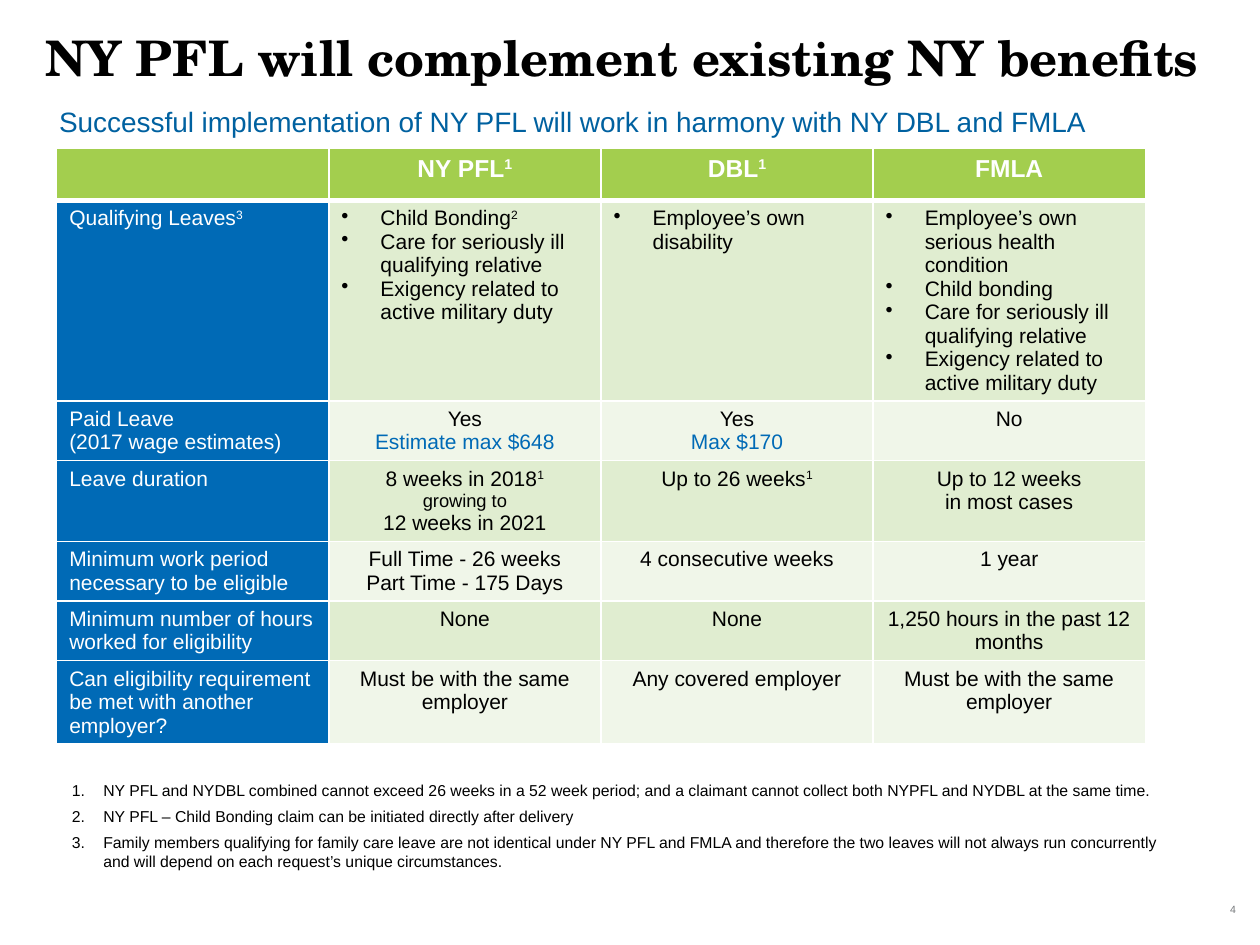
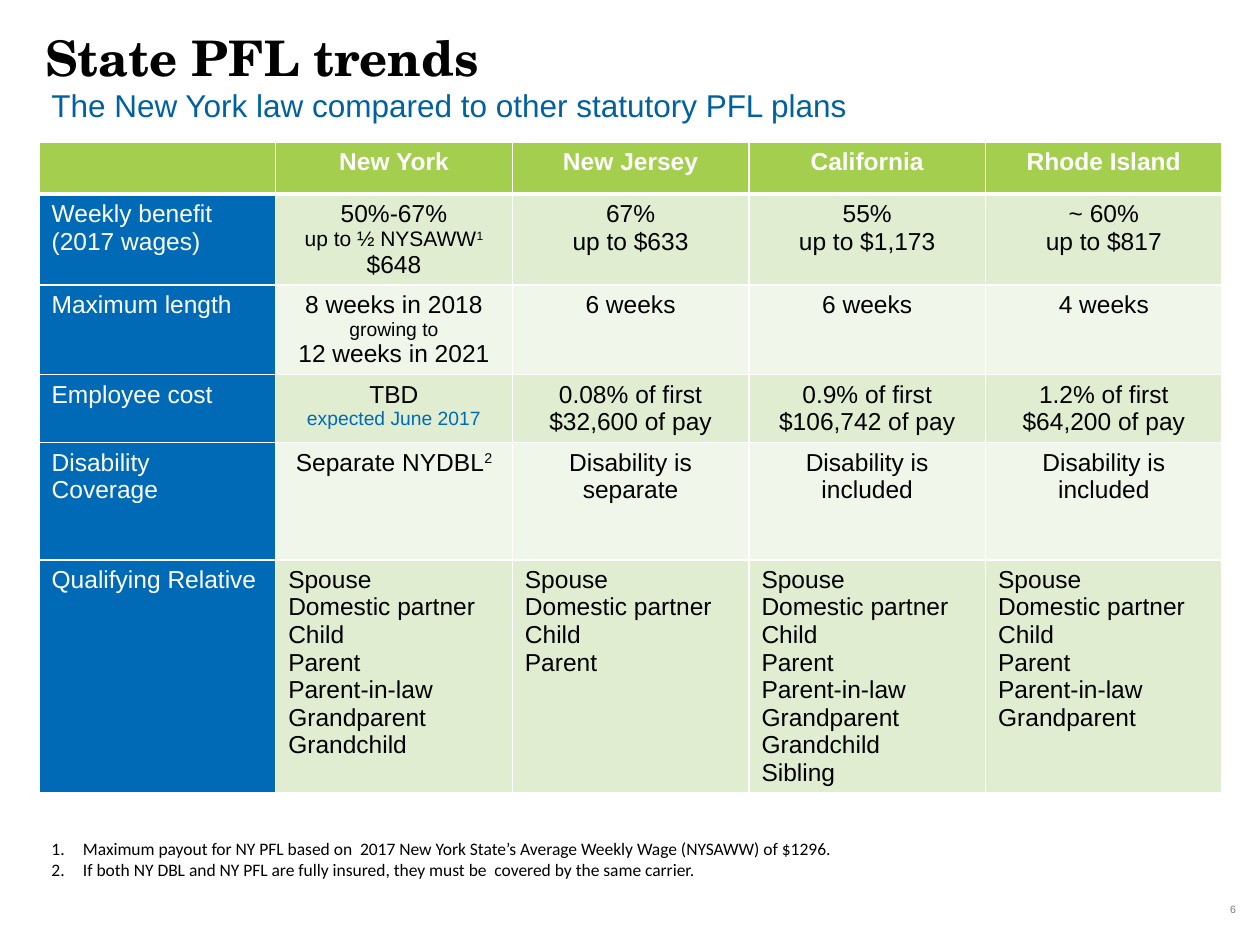
from lxml import etree
from pptx import Presentation
from pptx.dml.color import RGBColor
from pptx.enum.text import MSO_ANCHOR, MSO_AUTO_SIZE, PP_ALIGN
from pptx.oxml.ns import qn
from pptx.util import Inches, Pt

LEFT, CENTER, RIGHT = PP_ALIGN.LEFT, PP_ALIGN.CENTER, PP_ALIGN.RIGHT
TOP, MIDDLE, BOTTOM = MSO_ANCHOR.TOP, MSO_ANCHOR.MIDDLE, MSO_ANCHOR.BOTTOM

BLACK = RGBColor(0x00, 0x00, 0x00)
WHITE = RGBColor(0xFF, 0xFF, 0xFF)
GRAY = RGBColor(0x75, 0x78, 0x7B)
NAVY = RGBColor(0x00, 0x61, 0xA0)
BLUE = RGBColor(0x00, 0x6A, 0xB6)
GREEN = RGBColor(0xA3, 0xCE, 0x4E)
BANDS = RGBColor(0xE0, 0xED, 0xD0), RGBColor(0xF0, 0xF6, 0xE9)

TITLE_FONT, BODY_FONT, NOTE_FONT = "TeX Gyre Schola", "Arial", "Calibri"
COLUMNS, ROWS = 100, 75


def add_list_mark(p, tag, indent, **attributes):
    pPr = p._p.get_or_add_pPr()
    pPr.set("marL", str(Inches(indent)))
    pPr.set("indent", str(-Inches(indent)))
    etree.SubElement(pPr, qn(tag), attributes)


def add_borders(cell, top, bottom):
    """Draw white borders, 1 pt at the sides and the given points above and below."""
    tcPr = cell._tc.get_or_add_tcPr()
    widths = {"a:lnL": 1, "a:lnR": 1, "a:lnT": top, "a:lnB": bottom}
    for place, (tag, width) in enumerate(widths.items()):
        line = etree.Element(qn(tag), w=str(Pt(width)))
        fill = etree.SubElement(line, qn("a:solidFill"))
        etree.SubElement(fill, qn("a:srgbClr"), val=str(WHITE))
        tcPr.insert(place, line)


def write(p, text, size, color, font=BODY_FONT, bold=False):
    """Fill a paragraph; a caret raises the character that follows it."""
    plain, *raised = text.split("^")
    p.text = plain
    for mark in raised:
        p.add_run().text = mark
    for i, r in enumerate(p.runs):
        r.font.size, r.font.name, r.font.bold = Pt(size), font, bold
        r.font.color.rgb = color
        if i:
            r._r.get_or_add_rPr().set("baseline", "30000")


class Deck:
    def __init__(self):
        self.prs = Presentation()
        self.prs.slide_width, self.prs.slide_height = Inches(10), Inches(7.5)
        self.dx = self.prs.slide_width / COLUMNS
        self.dy = self.prs.slide_height / ROWS
        self.slide = None

    def box(self, x, y, w, h):
        """Turn grid columns and rows into lengths."""
        return [round(n) for n in (x * self.dx, y * self.dy, w * self.dx, h * self.dy)]

    def frame(self, sp, anchor, side, edge):
        tf = sp.text_frame
        tf.word_wrap, tf.auto_size = True, MSO_AUTO_SIZE.NONE
        tf.vertical_anchor = anchor
        tf.margin_left = tf.margin_right = Inches(side)
        tf.margin_top = tf.margin_bottom = Inches(edge)
        return tf

    def text_box(self, area, anchor, side, edge):
        sp = self.slide.shapes.add_textbox(*self.box(*area))
        return self.frame(sp, anchor, side, edge)

    def new_slide(self, title, area, number):
        self.slide = self.prs.slides.add_slide(self.prs.slide_layouts[5])
        sp = self.slide.shapes.title
        sp.left, sp.top, sp.width, sp.height = self.box(*area)
        p = self.frame(sp, TOP, 0.07, 0.04).paragraphs[0]
        write(p, title, 28, BLACK, TITLE_FONT, True)
        p.alignment, p.line_spacing = LEFT, 0.9
        p = self.text_box((91.4, 70.2, 7.4, 4), MIDDLE, 0.07, 0.04).paragraphs[0]
        write(p, number, 6, GRAY)
        p.alignment = RIGHT

    def subtitle(self, text, area, size):
        p = self.text_box(area, BOTTOM, 0.1, 0).paragraphs[0]
        write(p, text, size, NAVY)
        p.line_spacing = 1.4

    def footnotes(self, notes, area, size, font, anchor, side, edge, gap):
        tf = self.text_box(area, anchor, side, edge)
        for i, note in enumerate(notes):
            p = tf.paragraphs[0] if i == 0 else tf.add_paragraph()
            add_list_mark(p, "a:buAutoNum", 0.25, type="arabicPeriod")
            write(p, note, size, BLACK, font)
            p.space_before, p.space_after = Pt(gap if i else 0), Pt(gap)

    def table(self, rows, area, heights, size, accents, list_row, bulleted):
        """Draw rows of text; accents maps a line to its own size and colour."""
        x, y, w = area
        shape = self.slide.shapes.add_table(
            len(rows), len(rows[0]), *self.box(x, y, w, sum(heights)))
        table = shape.table
        table.first_row = table.horz_banding = False
        for i, row in enumerate(rows):
            table.rows[i].height = round(heights[i] * self.dy)
            for j, text in enumerate(row):
                cell = table.cell(i, j)
                head, label, listed = i == 0, j == 0, i == list_row and j > 0
                cell.fill.solid()
                cell.fill.fore_color.rgb = (
                    GREEN if head else BLUE if label else BANDS[(i - 1) % 2])
                add_borders(cell, 3 if i == 1 else 1, 3 if head else 1)
                color = WHITE if head or label else BLACK
                for k, line in enumerate(text.split("\n")):
                    tf = cell.text_frame
                    p = tf.paragraphs[0] if k == 0 else tf.add_paragraph()
                    if listed and bulleted:
                        add_list_mark(p, "a:buChar", 0.31, char="•")
                    own_size, own_color = accents.get(line, (size, color))
                    write(p, line, 14 if head else own_size, own_color, bold=head)
                    p.alignment = LEFT if listed or label else CENTER


BENEFITS = [
    ["", "NY PFL^1", "DBL^1", "FMLA"],
    ["Qualifying Leaves^3",
     "Child Bonding^2\nCare for seriously ill qualifying relative\n"
     "Exigency related to active military duty",
     "Employee’s own disability",
     "Employee’s own serious health condition\nChild bonding\n"
     "Care for seriously ill qualifying relative\n"
     "Exigency related to active military duty"],
    ["Paid Leave\n(2017 wage estimates)", "Yes\nEstimate max $648",
     "Yes\nMax $170", "No"],
    ["Leave duration", "8 weeks in 2018^1\ngrowing to\n12 weeks in 2021",
     "Up to 26 weeks^1", "Up to 12 weeks\nin most cases"],
    ["Minimum work period necessary to be eligible",
     "Full Time - 26 weeks\nPart Time - 175 Days", "4 consecutive weeks", "1 year"],
    ["Minimum number of hours worked for eligibility", "None", "None",
     "1,250 hours in the past 12 months"],
    ["Can eligibility requirement be met with another employer?",
     "Must be with the same employer", "Any covered employer",
     "Must be with the same employer"],
]
BENEFIT_NOTES = [
    "NY PFL and NYDBL combined cannot exceed 26 weeks in a 52 week period; "
    "and a claimant cannot collect both NYPFL and NYDBL at the same time.",
    "NY PFL – Child Bonding claim can be initiated directly after delivery",
    "Family members qualifying for family care leave are not identical under NY PFL "
    "and FMLA and therefore the two leaves will not always run concurrently and will "
    "depend on each request’s unique circumstances.",
]

RELATIVES = ["Spouse", "Domestic partner", "Child", "Parent", "Parent-in-law",
             "Grandparent", "Grandchild", "Sibling"]
STATES = [
    ["", "New York", "New Jersey", "California", "Rhode Island"],
    ["Weekly benefit\n(2017 wages)", "50%-67%\nup to ½ NYSAWW^1\n$648",
     "67%\nup to $633", "55%\nup to $1,173", "~ 60%\nup to $817"],
    ["Maximum length", "8 weeks in 2018\ngrowing to\n12 weeks in 2021",
     "6 weeks", "6 weeks", "4 weeks"],
    ["Employee cost", "TBD\nexpected June 2017", "0.08% of first $32,600 of pay",
     "0.9% of first $106,742 of pay", "1.2% of first $64,200 of pay"],
    ["Disability Coverage", "Separate NYDBL^2", "Disability is separate",
     "Disability is included", "Disability is included"],
    ["Qualifying Relative"] + ["\n".join(RELATIVES[:n]) for n in (7, 4, 8, 6)],
]
STATE_NOTES = [
    "Maximum payout for NY PFL based on  2017 New York State’s Average Weekly Wage "
    "(NYSAWW) of $1296.",
    "If both NY DBL and NY PFL are fully insured, they must be  covered by the "
    "same carrier.",
]


def main():
    deck = Deck()

    deck.new_slide("NY PFL will complement existing NY benefits",
                   (2.9, 2.3, 93.6, 6.4), "4")
    deck.subtitle("Successful implementation of NY PFL will work in harmony with "
                  "NY DBL and FMLA", (3.7, 7.6, 90.8, 3.4), 16)
    deck.table(BENEFITS, (4.5, 11.8, 86.4), [4.1, 15.9, 4.7, 6.4, 4.7, 4.7, 6.6], 12,
               {"growing to": (10.5, BLACK), "Estimate max $648": (12, BLUE),
                "Max $170": (12, BLUE)}, list_row=1, bulleted=True)
    deck.footnotes(BENEFIT_NOTES, (4.9, 62.5, 89.6, 6.1), 9, BODY_FONT,
                   MIDDLE, 0.08, 0.08, 2)

    deck.new_slide("State PFL trends", (2.9, 2.3, 75.9, 11.1), "6")
    deck.table(STATES, (3.1, 11.3, 93.9), [4.1, 7.2, 7.1, 5.4, 9.3, 18.4], 14,
               {"up to ½ NYSAWW^1": (12, BLACK), "growing to": (11, BLACK),
                "expected June 2017": (11, BLUE)}, list_row=5, bulleted=False)
    deck.subtitle("The New York law compared to other statutory PFL plans",
                  (3.1, 6.4, 76, 3.4), 18)
    deck.footnotes(STATE_NOTES, (3.1, 66, 67.1, 4.4), 10, NOTE_FONT, TOP, 0.1, 0.05, 0)

    deck.prs.save("out.pptx")


if __name__ == "__main__":
    main()
